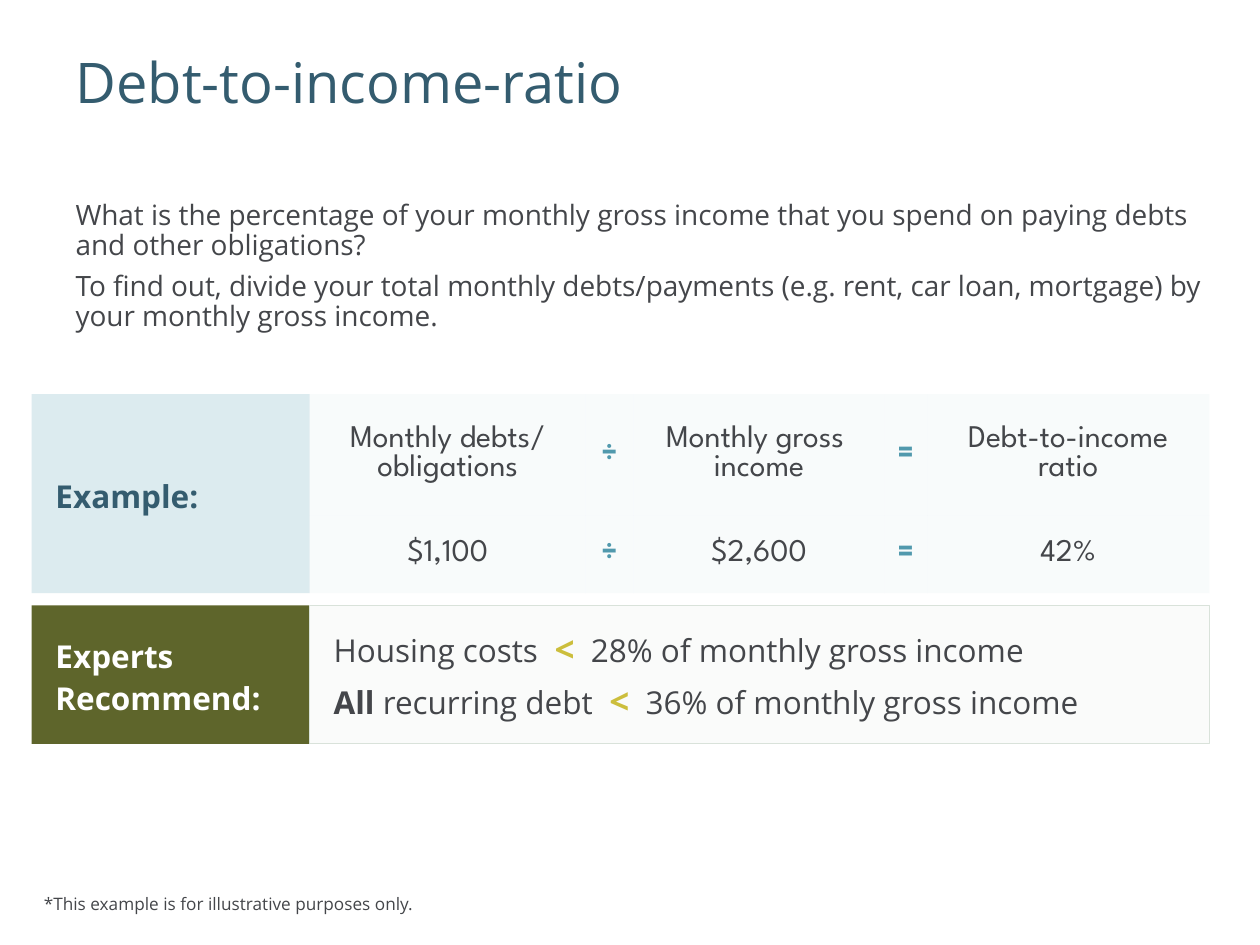
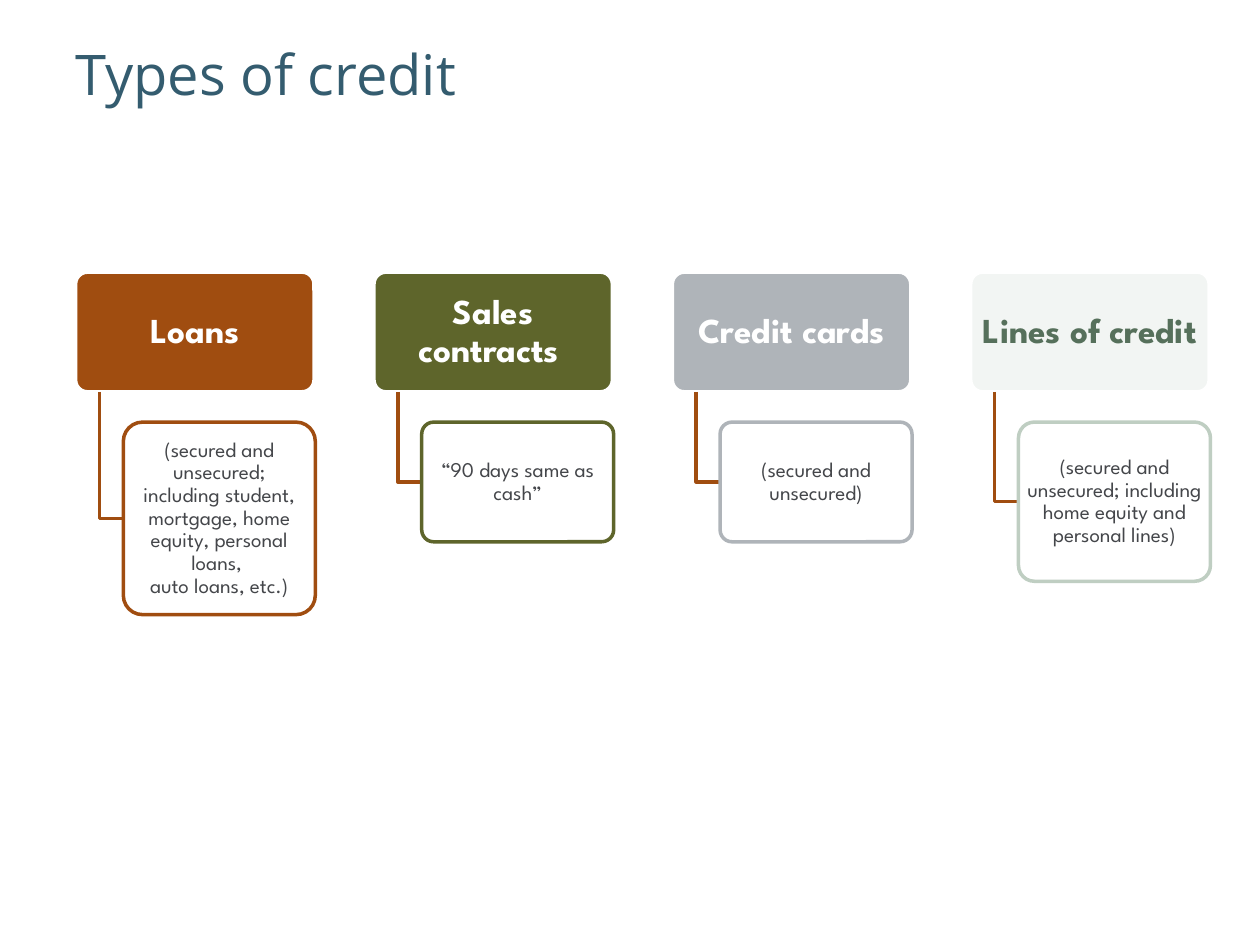
import pptx
import pptx.util
import pptx.dml.color
import pptx.enum.shapes
import pptx.enum.text
import lxml.etree

Pt = pptx.util.Pt
KIND = pptx.enum.shapes.MSO_SHAPE
ANCHOR = pptx.enum.text.MSO_ANCHOR
ALIGN = pptx.enum.text.PP_ALIGN
NS = "{http://schemas.openxmlformats.org/drawingml/2006/main}"
PLAIN = "{2D5ABB26-0587-4C30-8999-92F81FD0307C}"

SANS, SPARTAN = "Open Sans", "League Spartan"
INK, NAVY, WHITE = "44464A", "345C6F", "FFFFFF"
SKY, TEAL, OLIVE, GOLD = "DCEBEF", "5199AD", "5E652B", "CCBE3C"
RUST, GREY, MIST, SAGE, MOSS = "A04D10", "AFB4B9", "F2F5F3", "BFCEC2", "56705B"


def rgb(code):
    return pptx.dml.color.RGBColor.from_string(code)


def paint(fill, host, color, alpha=None):
    """Fill solidly; host is the XML element that holds the fill."""
    fill.solid()
    fill.fore_color.rgb = rgb(color)
    if alpha is not None:
        tint = next(host.iter(NS + "srgbClr"))
        lxml.etree.SubElement(tint, NS + "alpha", val=str(alpha * 1000))


def write(frame, paras, font=SANS, size=18, color=INK, bold=False, align=None,
          anchor=None, lead=None, before=None, after=None, pad=None):
    """Each paragraph is a string or a list of (text, changes) runs."""
    frame.word_wrap = True
    if anchor is not None:
        frame.vertical_anchor = anchor
    if pad is not None:
        (frame.margin_left, frame.margin_top,
         frame.margin_right, frame.margin_bottom) = map(Pt, pad)
    for i, runs in enumerate(paras):
        para = frame.add_paragraph() if i else frame.paragraphs[0]
        para.alignment = align
        para.line_spacing = lead
        para.space_after = after
        if i:
            para.space_before = before
        for text, change in [(runs, {})] if isinstance(runs, str) else runs:
            look = {"size": size, "color": color, "bold": bold} | change
            for j, part in enumerate(text.split("\n")):
                if j:
                    para.add_line_break()
                run = para.add_run()
                run.text = part
                run.font.name = font
                run.font.size = Pt(look["size"])
                run.font.bold = look["bold"]
                run.font.color.rgb = rgb(look["color"])


def label(slide, box, paras, **form):
    text = slide.shapes.add_textbox(*map(Pt, box))
    write(text.text_frame, paras, **form)


def block(slide, box, paras, fill, alpha=None, line=None, width=2,
          kind=KIND.RECTANGLE, **form):
    shape = slide.shapes.add_shape(kind, *map(Pt, box))
    shape.shadow.inherit = False
    if kind == KIND.ROUNDED_RECTANGLE:
        shape.adjustments[0] = 0.1
    paint(shape.fill, shape._element.spPr, fill, alpha)
    if line:
        shape.line.color.rgb = rgb(line)
        shape.line.width = Pt(width)
    else:
        shape.line.fill.background()
    write(shape.text_frame, paras, anchor=ANCHOR.MIDDLE, **form)


def start(deck, title, top):
    """New blank slide with the shared title style."""
    slide = deck.slides.add_slide(deck.slide_layouts[6])
    label(slide, (43.2, top, 648, 90), [title], size=32, color=NAVY,
          lead=1.05, pad=(0, 0, 0, 0))
    return slide


def grid(slide, box, rows, widths, heights):
    """Formula table: operators stand in the odd columns."""
    frame = slide.shapes.add_table(len(rows), len(widths), *map(Pt, box))
    table = frame.table
    table.first_row = table.horz_banding = False
    table._tbl.tblPr.find(NS + "tableStyleId").text = PLAIN
    for col, width in zip(table.columns, widths):
        col.width = Pt(width)
    for row, height, words in zip(table.rows, heights, rows):
        row.height = Pt(height)
        for i, (cell, text) in enumerate(zip(row.cells, words)):
            paint(cell.fill, cell._tc.tcPr, SKY, 19)
            cell.vertical_anchor = ANCHOR.MIDDLE
            sign = i % 2 == 1
            write(cell.text_frame, text if isinstance(text, list) else [text],
                  font=SPARTAN, color=TEAL if sign else INK, bold=sign,
                  align=ALIGN.CENTER)


def ratio(deck):
    slide = start(deck, "Debt-to-income-ratio", 25.2)
    label(slide, (43.2, 115.2, 648, 96), [
        "What is the percentage of your monthly gross income that you spend "
        "on paying debts and other obligations?",
        "To find out, divide your total monthly debts/payments (e.g. rent, "
        "car loan, mortgage) by your monthly gross income."],
        size=16, lead=0.9, after=Pt(6), pad=(0, 0, 0, 0))

    # Two bands: a label on the left, its content on the right
    left, side, main = 18, 159, 514.1
    form = {"lead": Pt(24), "pad": (13.7, 0, 0, 0), "align": ALIGN.LEFT}
    top, high = 225.2, 113.8
    block(slide, (left, top, side, high), ["Example:"], SKY,
          color=NAVY, bold=True, **form)
    grid(slide, (left + side, top, main, high), [
        [["Monthly debts/", "obligations"], "÷", "Monthly gross \nincome",
         "=", "Debt-to-income ratio"],
        ["$1,100", "÷", "$2,600", "=", "42%"]],
        (157.7, 27.4, 143.3, 24.5, 161.2), (69.1, 44.7))

    top, high = 345.9, 79.2
    block(slide, (left, top, side, high), ["Experts Recommend:"], OLIVE,
          color=WHITE, bold=True, **form)
    less = ("<", {"size": 20, "color": GOLD, "bold": True})
    block(slide, (left + side, top, main, high), [
        [("Housing costs  ", {}), less,
         ("  28% of monthly gross income", {})],
        [("All ", {"bold": True}), ("recurring debt  ", {}), less,
         ("  36% of monthly gross income", {})]],
        "E5EBE7", alpha=19, line="D9E2DA", width=0.75, before=Pt(6), **form)

    # Footnote
    label(slide, (left, 507, 235, 20),
          ["*This example is for illustrative purposes only."], size=9.8)


def branch(slide, box, head, note, fill, edge, ink):
    """Header, elbow line and note card; the box spans all three."""
    left, top, wide, high = box
    drop, tall, inset = 85.7, 68.4, 27.3
    form = {"font": SPARTAN, "kind": KIND.ROUNDED_RECTANGLE,
            "lead": 0.9, "align": ALIGN.CENTER}
    block(slide, (left, top, wide, tall), [head], fill, line=WHITE,
          size=20, color=ink, bold=True, pad=(2.9, 2, 2.9, 2), **form)

    # Elbow from under the header to the middle of the card's side
    stem, mid = left + inset / 2, top + (drop + high) / 2
    path = slide.shapes.build_freeform(Pt(stem), Pt(top + tall))
    path.add_line_segments([(Pt(stem), Pt(mid)), (Pt(left + inset), Pt(mid))],
                           close=False)
    elbow = path.convert_to_shape()
    elbow.shadow.inherit = False
    elbow.fill.background()
    elbow.line.color.rgb = rgb(RUST)
    elbow.line.width = Pt(2)

    block(slide, (left + inset, top + drop, wide - inset + 0.7, high - drop),
          [note], WHITE, alpha=90, line=edge, size=12,
          pad=(2.2, 1.5, 2.2, 1.5), **form)


def credit(deck):
    slide = start(deck, "Types of credit", 20.9)
    kinds = [
        ("Loans", "(secured and unsecured; including student, mortgage, "
         "home equity, personal loans, \nauto loans, etc.)",
         RUST, RUST, WHITE, 195.7),
        ("Sales contracts ", "“90 days same as cash”",
         OLIVE, OLIVE, WHITE, 154.1),
        ("Credit cards", "(secured and unsecured)", GREY, GREY, WHITE, 154.1),
        ("Lines of credit", "(secured and unsecured; including home equity "
         "and personal lines)", MIST, SAGE, MOSS, 176.7)]
    for i, (head, note, fill, edge, ink, high) in enumerate(kinds):
        branch(slide, (43.2 + i * 170.5, 155.5, 136.3, high),
               head, note, fill, edge, ink)


def main():
    deck = pptx.Presentation()
    deck.slide_width, deck.slide_height = Pt(720), Pt(540)
    ratio(deck)
    credit(deck)
    deck.save("out.pptx")


if __name__ == "__main__":
    main()
